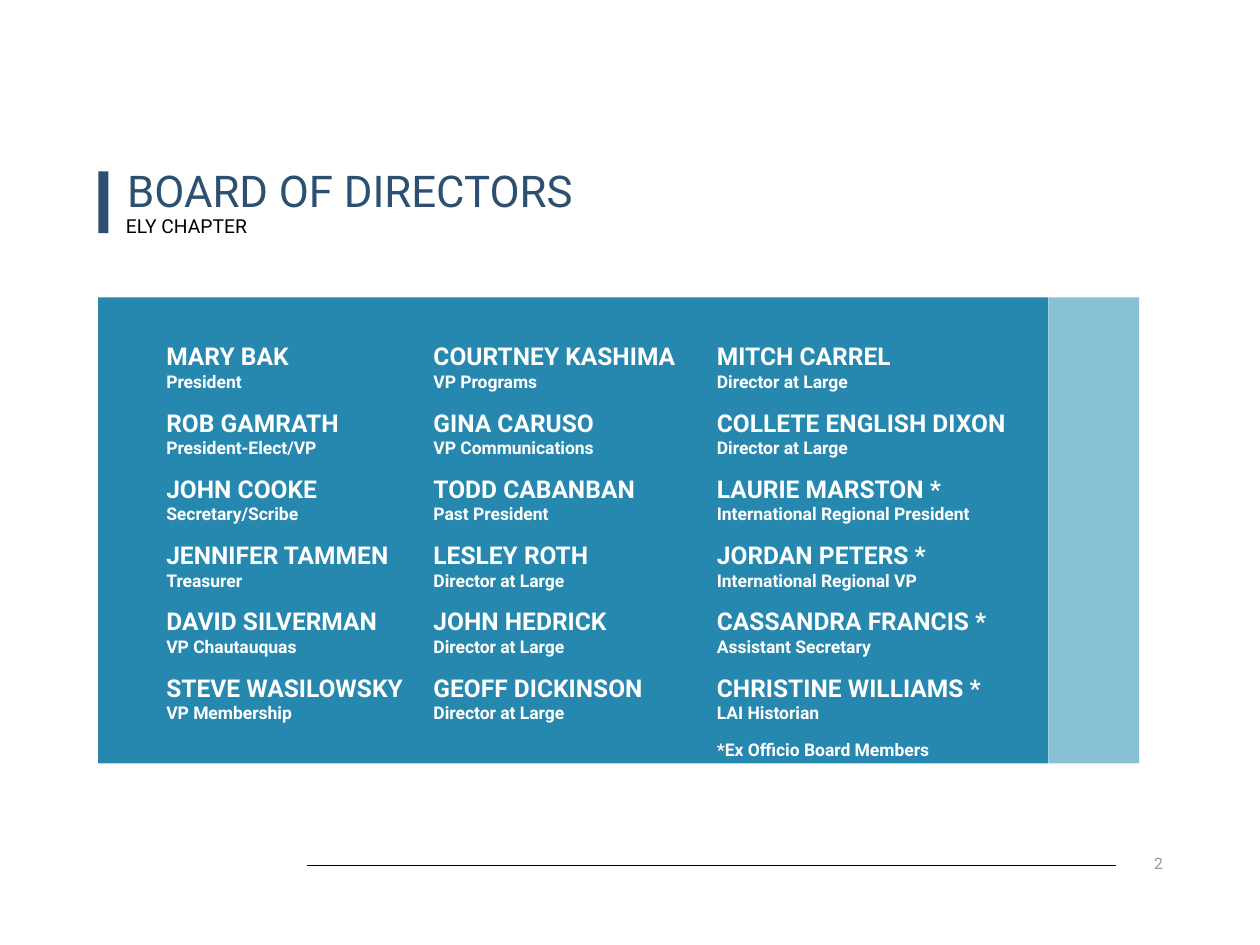
import copy

import lxml.etree
import pptx
import pptx.dml.color
import pptx.enum.shapes
import pptx.enum.text
import pptx.oxml.ns
import pptx.util
from pptx.util import Inches

NAVY, TEAL, PALE, WHITE, BLACK, GREY = "2D4F70", "2688AE", "88C1D5", "FFFFFF", "000000", "999999"
COLUMNS = [
    (0.47, 2.04, 3.19, [
        ("MARY BAK", "President"),
        ("ROB GAMRATH", "President-Elect/VP"),
        ("JOHN COOKE", "Secretary/Scribe"),
        ("JENNIFER TAMMEN", "Treasurer"),
        ("DAVID SILVERMAN", "VP Chautauquas"),
        ("STEVE WASILOWSKY", "VP Membership"),
    ]),
    (2.59, 2.25, 3.16, [
        ("COURTNEY KASHIMA", "VP Programs"),
        ("GINA CARUSO", "VP Communications"),
        ("TODD CABANBAN", "Past President"),
        ("LESLEY ROTH", "Director at Large"),
        ("JOHN HEDRICK", "Director at Large"),
        ("GEOFF DICKINSON", "Director at Large"),
    ]),
    (4.84, 2.7, 3.46, [
        ("MITCH CARREL", "Director at Large"),
        ("COLLETE ENGLISH DIXON", "Director at Large"),
        ("LAURIE MARSTON *", "International Regional President"),
        ("JORDAN PETERS *", "International Regional VP"),
        ("CASSANDRA FRANCIS *", "Assistant Secretary"),
        ("CHRISTINE WILLIAMS *", "LAI Historian"),
        ("*Ex Officio Board Members",),
    ]),
]


def rgb(color):
    """Turn a hex string into a colour."""
    return pptx.dml.color.RGBColor.from_string(color)


def add_text(p, text, size=10, color=BLACK, bold=False):
    """Add a formatted run to a paragraph."""
    r = p.add_run()
    r.text = text
    r.font.name = "Roboto"
    r.font.size = pptx.util.Pt(size)
    r.font.bold = bold
    r.font.color.rgb = rgb(color)
    return r


def add_break(p, r):
    """Add a line break that has the format of a run."""
    p.add_line_break()
    p._p[-1].append(copy.deepcopy(r._r.get_or_add_rPr()))


def set_frame(sp, side, edge, anchor=pptx.enum.text.MSO_ANCHOR.TOP, grow=True):
    """Set wrapping, insets and anchor, and return the text frame."""
    sizes = pptx.enum.text.MSO_AUTO_SIZE
    tf = sp.text_frame
    tf.word_wrap = True
    tf.auto_size = sizes.SHAPE_TO_FIT_TEXT if grow else sizes.NONE
    tf.vertical_anchor = anchor
    tf.margin_left = tf.margin_right = Inches(side)
    tf.margin_top = tf.margin_bottom = Inches(edge)
    return tf


def add_box(s, x, y, w, h):
    """Add an empty text box."""
    return s.shapes.add_textbox(Inches(x), Inches(y), Inches(w), Inches(h))


def add_rect(s, x, y, w, h, color):
    """Add a plain filled rectangle."""
    sp = s.shapes.add_shape(pptx.enum.shapes.MSO_SHAPE.RECTANGLE,
                            Inches(x), Inches(y), Inches(w), Inches(h))
    sp.shadow.inherit = False
    sp.fill.solid()
    sp.fill.fore_color.rgb = rgb(color)
    sp.line.fill.background()


def add_header(s, x, y, w):
    """Place the title, the chapter name and the bar beside them."""
    title = s.shapes.title
    title.left, title.top = Inches(x + 0.18), Inches(y)
    title.width, title.height = Inches(w), Inches(0.47)
    p = set_frame(title, 0.05, 0.02).paragraphs[0]
    p.alignment = pptx.enum.text.PP_ALIGN.LEFT
    add_text(p, "BOARD OF DIRECTORS", size=25, color=NAVY)
    chapter = add_box(s, x + 0.17, y + 0.4, w, 0.24)
    add_text(set_frame(chapter, 0.05, 0.02).paragraphs[0], "ELY CHAPTER", size=11)
    add_rect(s, x, y + 0.08, 0.08, 0.49, NAVY)


def add_members(s, x, y, w, h, members):
    """Place one column of names with their offices."""
    tf = set_frame(add_box(s, x, y, w, h), 0.07, 0.04)
    for i, (*names, office) in enumerate(members):
        p = tf.add_paragraph() if i else tf.paragraphs[0]
        p.space_after = pptx.util.Pt(9)
        for name in names:
            add_break(p, add_text(p, name, size=14, color=WHITE, bold=True))
        add_text(p, office, color=WHITE, bold=True)


def add_board(s, x, y, w, h):
    """Place the panel, its side strip and the columns of members."""
    strip = 0.72
    add_rect(s, x, y, w - strip, h, TEAL)
    add_rect(s, x + w - strip, y, strip, h, PALE)
    for dx, width, height, members in COLUMNS:
        add_members(s, x + dx, y + 0.31, width, height, members)


def add_footer(s, x, y, w):
    """Place the footer rule and the page number."""
    line = s.shapes.add_connector(pptx.enum.shapes.MSO_CONNECTOR.STRAIGHT,
                                  Inches(x), Inches(y), Inches(x + w), Inches(y))
    line.line.color.rgb = rgb(BLACK)
    line.line.width = pptx.util.Pt(0.25)
    lxml.etree.SubElement(line._element.spPr, pptx.oxml.ns.qn("a:effectLst"))
    number = add_box(s, x + w + 0.03, y - 0.12, 0.61, 0.2)
    p = set_frame(number, 0.13, 0.07, pptx.enum.text.MSO_ANCHOR.MIDDLE, grow=False).paragraphs[0]
    p.alignment = pptx.enum.text.PP_ALIGN.CENTER
    add_text(p, "2", size=9, color=GREY)


def main():
    """Build and save the slide."""
    prs = pptx.Presentation()
    prs.slide_width, prs.slide_height = Inches(10), Inches(7.5)
    s = prs.slides.add_slide(prs.slide_layouts[5])
    add_footer(s, 2.44, 6.87, 6.42)
    add_header(s, 0.78, 1.28, 8.36)
    add_board(s, 0.78, 2.36, 8.26, 3.7)
    prs.save("out.pptx")


if __name__ == "__main__":
    main()
